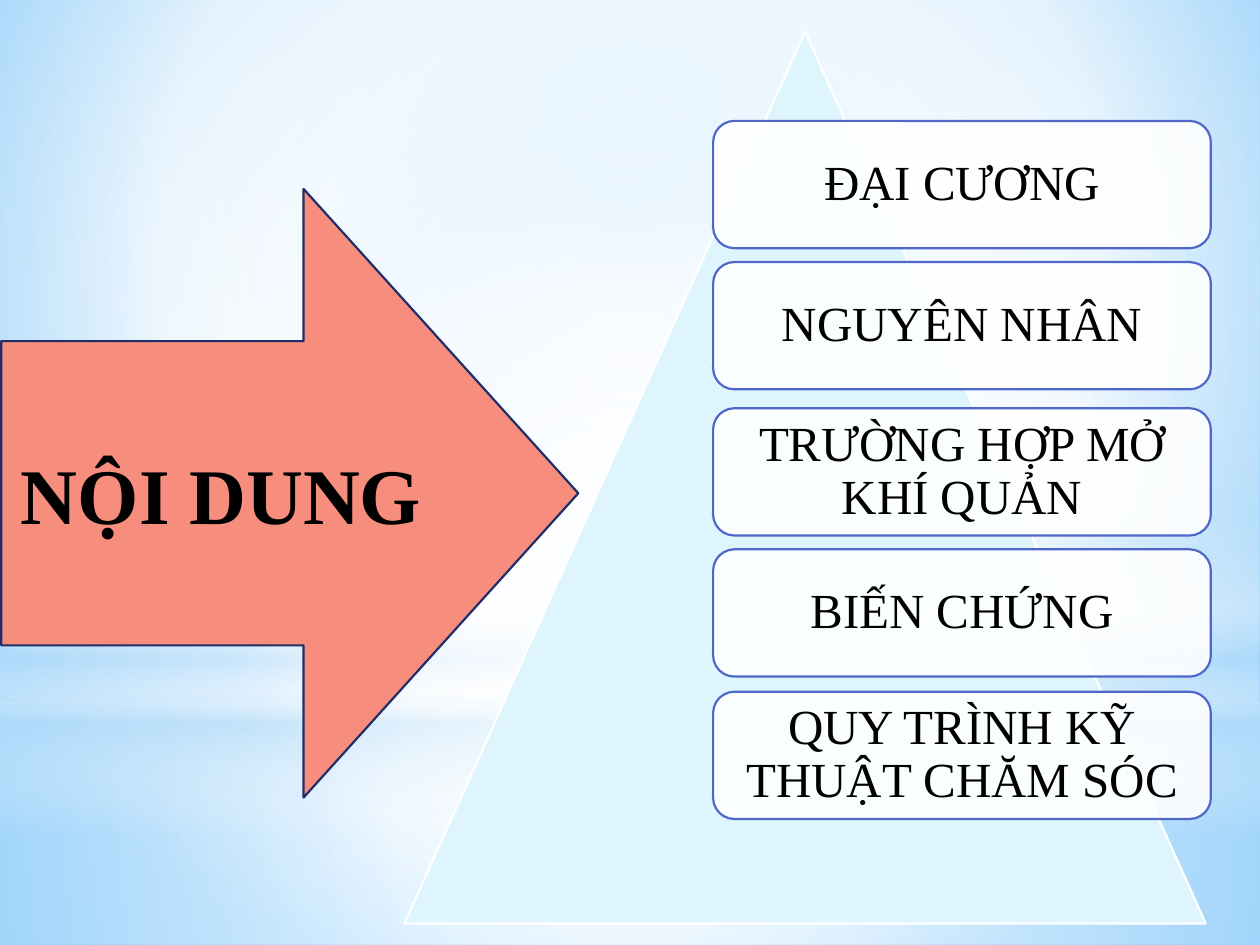
from typing import NamedTuple, Optional

from lxml.etree import SubElement
from pptx import Presentation
from pptx.dml.color import RGBColor
from pptx.enum.shapes import MSO_SHAPE as Kind
from pptx.enum.text import MSO_ANCHOR as Anchor
from pptx.enum.text import MSO_AUTO_SIZE as Fit
from pptx.enum.text import PP_ALIGN as Align
from pptx.oxml.ns import qn
from pptx.util import Inches, Pt

COLS, ROWS = 100, 75
WIDTH, HEIGHT = Inches(10), Inches(7.5)
FONT = "Times New Roman"

WHITE = RGBColor(0xFF, 0xFF, 0xFF)
BLACK = RGBColor(0x00, 0x00, 0x00)
MIST = RGBColor(0xB4, 0xDC, 0xFA)
SKY = RGBColor(0x9E, 0xD5, 0xFF)
AZURE = RGBColor(0x5B, 0xB9, 0xFF)
CORAL = RGBColor(0xF7, 0x8D, 0x7C)
NAVY = RGBColor(0x1F, 0x2E, 0x69)
AQUA = RGBColor(0xDF, 0xF5, 0xFD)
INDIGO = RGBColor(0x4E, 0x67, 0xC8)


class Box(NamedTuple):
    """A place on the grid, in columns and rows."""
    col: float
    row: float
    wide: float
    high: float

    def place(self) -> tuple:
        x, y = WIDTH / COLS, HEIGHT / ROWS
        return (round(self.col * x), round(self.row * y),
                round(self.wide * x), round(self.high * y))


class Stop(NamedTuple):
    pos: int
    color: RGBColor
    alpha: int = 100


class Layer(NamedTuple):
    """A soft backdrop shape; without a focus its gradient runs downwards."""
    kind: Kind
    box: Box
    stops: tuple
    focus: Optional[tuple] = None


class Card(NamedTuple):
    row: float
    text: str


MID = (50, 50, 50, 50)
BACK = (Stop(0, SKY), Stop(60, WHITE), Stop(100, AZURE))
LAYERS = (
    Layer(Kind.RECTANGLE, Box(0, 55.8, 100, 19.2),
          (Stop(0, WHITE, 91), Stop(37, WHITE, 76), Stop(100, MIST, 79)), MID),
    Layer(Kind.RECTANGLE, Box(0, 0, 100, 55.8),
          (Stop(0, WHITE, 89), Stop(48, WHITE, 62), Stop(100, MIST, 79)), MID),
    Layer(Kind.RECTANGLE, Box(0, 41.2, 100, 25),
          (Stop(0, WHITE, 0), Stop(29, WHITE, 30), Stop(45, MIST, 40),
           Stop(55, WHITE, 26), Stop(65, MIST, 60), Stop(100, WHITE, 0))),
    Layer(Kind.OVAL, Box(0, 17.5, 100, 55.8),
          (Stop(0, WHITE), Stop(56, WHITE, 0)), MID),
)
ARROW = Box(0.1, 15, 45.8, 48.3)
PEAK = Box(32.1, 2.5, 63.6, 70.8)
LEFT, WIDE, HIGH = 56.6, 39.5, 10.1
CARDS = (
    Card(9.6, "ĐẠI CƯƠNG"),
    Card(20.8, "NGUYÊN NHÂN"),
    Card(32.4, "TRƯỜNG HỢP MỞ KHÍ QUẢN"),
    Card(43.6, "BIẾN CHỨNG"),
    Card(54.9, "QUY TRÌNH KỸ THUẬT CHĂM SÓC"),
)


def set_alpha(clr, share: int) -> None:
    SubElement(clr, qn("a:alpha"), val=str(share * 1000))


def blend(grad, stops: tuple, focus: Optional[tuple]) -> None:
    """Rewrite a gradient fill element with the given stops."""
    for part in list(grad):
        grad.remove(part)
    ramp = SubElement(grad, qn("a:gsLst"))
    for stop in stops:
        gs = SubElement(ramp, qn("a:gs"), pos=str(stop.pos * 1000))
        clr = SubElement(gs, qn("a:srgbClr"), val=str(stop.color))
        if stop.alpha < 100:
            set_alpha(clr, stop.alpha)
    if focus:
        ring = SubElement(grad, qn("a:path"), {"path": "circle"})
        sides = {k: str(v * 1000) for k, v in zip("ltrb", focus)}
        SubElement(ring, qn("a:fillToRect"), sides)
    else:
        SubElement(grad, qn("a:lin"), ang="5400000", scaled="0")


def paint(shape, fill: RGBColor, line: RGBColor) -> None:
    shape.fill.solid()
    shape.fill.fore_color.rgb = fill
    shape.line.color.rgb = line
    shape.line.width = Pt(1.25)


def add_shape(slide, kind: Kind, box: Box):
    shape = slide.shapes.add_shape(kind, *box.place())
    shape.shadow.inherit = False
    return shape


def write(shape, text: str, size: int, bold: bool = False) -> None:
    frame = shape.text_frame
    frame.word_wrap = True
    frame.auto_size = Fit.NONE
    frame.vertical_anchor = Anchor.MIDDLE
    para = frame.paragraphs[0]
    para.alignment = Align.CENTER
    run = para.add_run()
    run.text = text
    run.font.name = FONT
    run.font.size = Pt(size)
    run.font.bold = bold
    run.font.color.rgb = BLACK


def add_layer(slide, layer: Layer) -> None:
    shape = add_shape(slide, layer.kind, layer.box)
    shape.line.fill.background()
    shape.fill.gradient()
    blend(shape.element.find(".//" + qn("a:gradFill")),
          layer.stops, layer.focus)


def add_arrow(slide) -> None:
    arrow = add_shape(slide, Kind.RIGHT_ARROW, ARROW)
    arrow.adjustments[0] = 0.5
    arrow.adjustments[1] = 0.476
    paint(arrow, CORAL, NAVY)
    write(arrow, "NỘI DUNG", 45, bold=True)


def add_card(slide, card: Card) -> None:
    shape = add_shape(slide, Kind.ROUNDED_RECTANGLE,
                      Box(LEFT, card.row, WIDE, HIGH))
    paint(shape, WHITE, INDIGO)
    set_alpha(shape.element.spPr.find(
        qn("a:solidFill") + "/" + qn("a:srgbClr")), 90)
    write(shape, card.text, 28)
    frame = shape.text_frame
    frame.margin_left = frame.margin_right = Inches(0.12)
    frame.margin_top = frame.margin_bottom = Inches(0.12)
    frame.paragraphs[0].line_spacing = 0.9


def main() -> None:
    deck = Presentation()
    deck.slide_width, deck.slide_height = WIDTH, HEIGHT
    slide = deck.slides.add_slide(deck.slide_layouts[6])
    slide.background.fill.gradient()
    blend(slide.element.find(".//" + qn("a:gradFill")), BACK, (20, 10, 20, 60))
    for layer in LAYERS:
        add_layer(slide, layer)
    paint(add_shape(slide, Kind.ISOSCELES_TRIANGLE, PEAK), AQUA, WHITE)
    add_arrow(slide)
    for card in CARDS:
        add_card(slide, card)
    deck.save("out.pptx")


if __name__ == "__main__":
    main()
